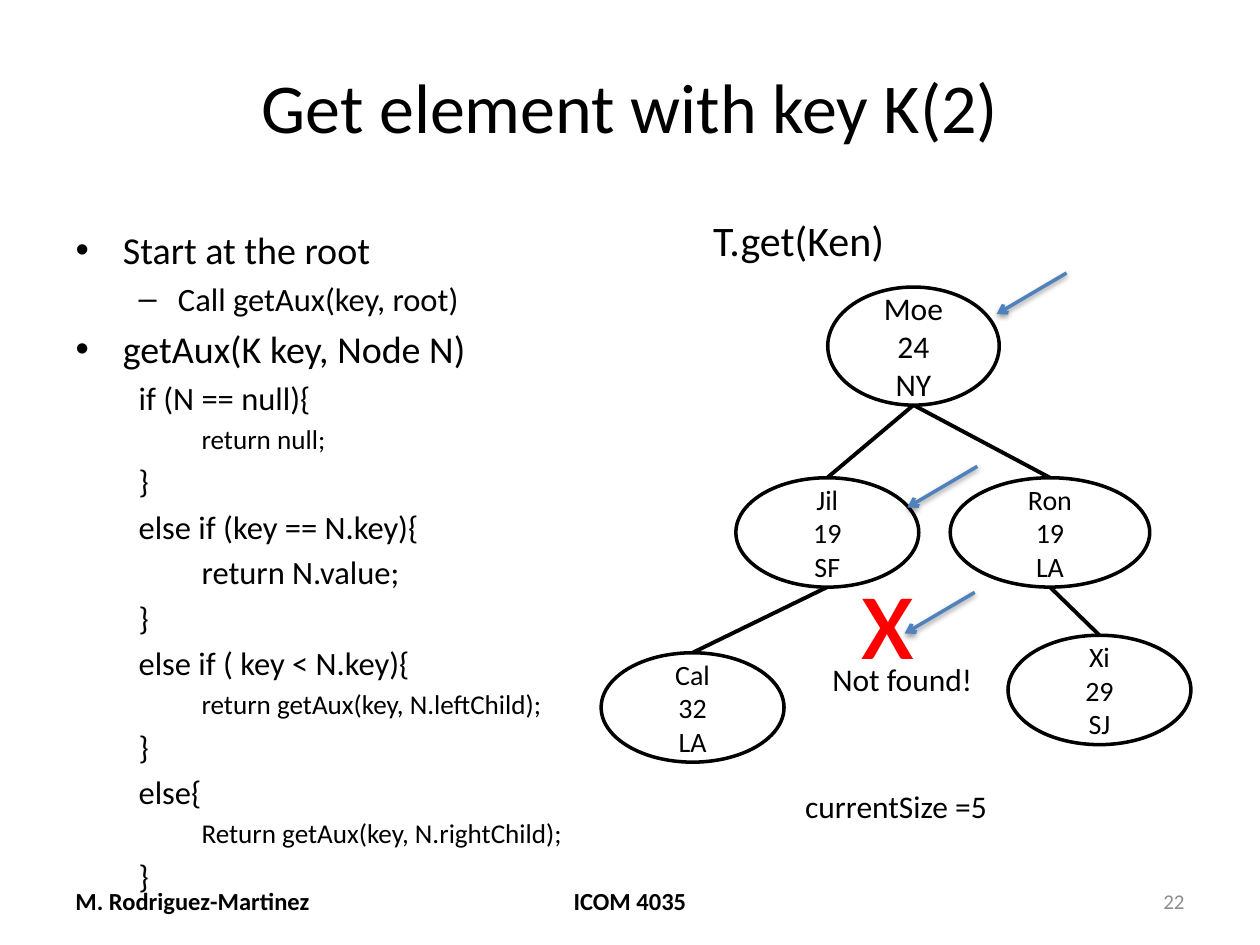
from lxml import etree
from pptx import Presentation
from pptx.dml.color import RGBColor
from pptx.enum.shapes import MSO_CONNECTOR, MSO_SHAPE
from pptx.enum.text import MSO_ANCHOR, MSO_AUTO_SIZE, PP_ALIGN
from pptx.oxml.ns import qn
from pptx.util import Pt

LEFT, CENTER, RIGHT = PP_ALIGN.LEFT, PP_ALIGN.CENTER, PP_ALIGN.RIGHT
MIDDLE = MSO_ANCHOR.MIDDLE
FIXED, GROW = MSO_AUTO_SIZE.NONE, MSO_AUTO_SIZE.SHAPE_TO_FIT_TEXT
OVAL, STRAIGHT = MSO_SHAPE.OVAL, MSO_CONNECTOR.STRAIGHT

COLORS = {"ink": "000000", "paper": "FFFFFF", "pointer": "4F81BD",
          "miss": "FF0000", "number": "8C8C8C"}
FONT = "Calibri"

OUTLINE = {
    "point": (0, 27, -27, 21.7, True),
    "subpoint": (1, 58.5, -22.5, 18.6, True),
    "code": (1, 36, 0, 18.6, False),
    "inner": (2, 72, 0, 15.5, False),
}

STEPS = [
    ("point", "Start at the root"),
    ("subpoint", "Call getAux(key, root)"),
    ("point", "getAux(K key, Node N)"),
    ("code", "if (N == null){"),
    ("inner", "return null;"),
    ("code", "}"),
    ("code", "else if (key == N.key){"),
    ("code", "\treturn N.value;"),
    ("code", "}"),
    ("code", "else if ( key < N.key){"),
    ("inner", "return getAux(key, N.leftChild);"),
    ("code", "}"),
    ("code", "else{"),
    ("inner", "Return getAux(key, N.rightChild);"),
    ("code", "}"),
]

NODES = {
    "Moe": (("24", "NY"), (473, 164, 98, 67.5), 18),
    "Jil": (("19", "SF"), (420.5, 273, 104.5, 62.5), 16),
    "Ron": (("19", "LA"), (543, 273, 114, 62.5), 16),
    "Cal": (("32", "LA"), (343.5, 373, 104.5, 62.5), 16),
    "Xi": (("29", "SJ"), (576, 363, 104.5, 62.5), 16),
}
EDGES = [("Moe", "Jil"), ("Moe", "Ron"), ("Jil", "Cal"), ("Ron", "Xi")]
POINTER_TIPS = [(569.5, 179.5), (518.5, 290), (517, 362)]
POINTER_REACH = (40, -23.5)


class TreeSlide:
    """Holds the style and the current page, and draws each kind of element."""

    def __init__(self, deck):
        self.page = deck.slides.add_slide(deck.slide_layouts[1])

    def color(self, name):
        return RGBColor.from_string(COLORS[name])

    def place(self, shape, box):
        shape.left, shape.top, shape.width, shape.height = map(Pt, box)

    def add_span(self, para, text, size, color="ink", bold=False):
        span = para.add_run()
        span.text = text
        span.font.name, span.font.size, span.font.bold = FONT, Pt(size), bold
        span.font.color.rgb = self.color(color)

    def title(self, text, box):
        shape = self.page.shapes.title
        self.place(shape, box)
        shape.text_frame.auto_size = FIXED
        self.add_span(shape.text_frame.paragraphs[0], text, 40)

    def outline(self, steps, box):
        shape = self.page.placeholders[1]
        self.place(shape, box)
        frame = shape.text_frame
        frame.auto_size = FIXED
        for index, (kind, text) in enumerate(steps):
            para = frame.add_paragraph() if index else frame.paragraphs[0]
            para.level, margin, indent, size, bulleted = OUTLINE[kind]
            props = para._p.get_or_add_pPr()
            props.set("marL", str(Pt(margin)))
            props.set("indent", str(Pt(indent)))
            if not bulleted:
                etree.SubElement(props, qn("a:buNone"))
            self.add_span(para, text, size)

    def label(self, text, box, size, color="ink"):
        frame = self.page.shapes.add_textbox(*map(Pt, box)).text_frame
        frame.word_wrap, frame.auto_size = False, GROW
        self.add_span(frame.paragraphs[0], text, size, color)

    def footer(self, text, box, align, size, color="ink", bold=False):
        frame = self.page.shapes.add_textbox(*map(Pt, box)).text_frame
        frame.word_wrap, frame.vertical_anchor = True, MIDDLE
        frame.paragraphs[0].alignment = align
        self.add_span(frame.paragraphs[0], text, size, color, bold)

    def node(self, lines, box, size):
        shape = self.page.shapes.add_shape(OVAL, *map(Pt, box))
        shape.shadow.inherit = False
        shape.fill.solid()
        shape.fill.fore_color.rgb = self.color("paper")
        shape.line.color.rgb = self.color("ink")
        shape.line.width = Pt(2)
        frame = shape.text_frame
        frame.vertical_anchor = MIDDLE
        frame.margin_top = frame.margin_bottom = 0
        for index, text in enumerate(lines):
            para = frame.add_paragraph() if index else frame.paragraphs[0]
            para.alignment = CENTER
            self.add_span(para, text, size)

    def line(self, start, end, color, width):
        connector = self.page.shapes.add_connector(STRAIGHT, *map(Pt, (*start, *end)))
        connector.line.color.rgb = self.color(color)
        connector.line.width = Pt(width)
        effects = etree.SubElement(connector._element.spPr, qn("a:effectLst"))
        return connector, effects

    def edge(self, parent, child):
        left, top, width, height = parent
        start = (left + width / 2, top + height)
        self.line(start, (child[0] + child[2] / 2, child[1]), "ink", 2.25)

    def pointer(self, tip):
        start = (tip[0] + POINTER_REACH[0], tip[1] + POINTER_REACH[1])
        connector, effects = self.line(start, tip, "pointer", 2)
        etree.SubElement(connector.line._get_or_add_ln(), qn("a:tailEnd"), type="arrow")
        shadow = etree.SubElement(effects, qn("a:outerShdw"), blurRad=str(Pt(3.1)),
                                  dist=str(Pt(1.6)), dir="5400000", rotWithShape="0")
        tint = etree.SubElement(shadow, qn("a:srgbClr"), val=COLORS["ink"])
        etree.SubElement(tint, qn("a:alpha"), val="38000")


def main():
    deck = Presentation()
    deck.slide_width, deck.slide_height = Pt(720), Pt(540)
    slide = TreeSlide(deck)
    slide.title("Get element with key K(2)", (36, 21.6, 648, 77))
    slide.outline(STEPS, (36, 126, 318, 356.5))
    slide.footer("M. Rodriguez-Martinez", (36, 500.5, 168, 28.8), LEFT, 14, bold=True)
    slide.footer("ICOM 4035", (246, 500.5, 228, 28.8), CENTER, 14, bold=True)
    slide.footer("22", (516, 500.5, 168, 28.8), RIGHT, 12, "number")
    for parent, child in EDGES:
        slide.edge(NODES[parent][1], NODES[child][1])
    for name, (details, box, size) in NODES.items():
        slide.node((name, *details), box, size)
    slide.label("T.get(Ken)", (400.5, 119, 116, 36), 24)
    for tip in POINTER_TIPS:
        slide.pointer(tip)
    slide.label("Not found!", (468.5, 373.5, 96, 29), 18)
    slide.label("x", (484.5, 301.5, 46, 94.5), 72, "miss")
    slide.label("currentSize =5", (453, 446, 120, 29), 18)
    deck.save("out.pptx")


if __name__ == "__main__":
    main()
